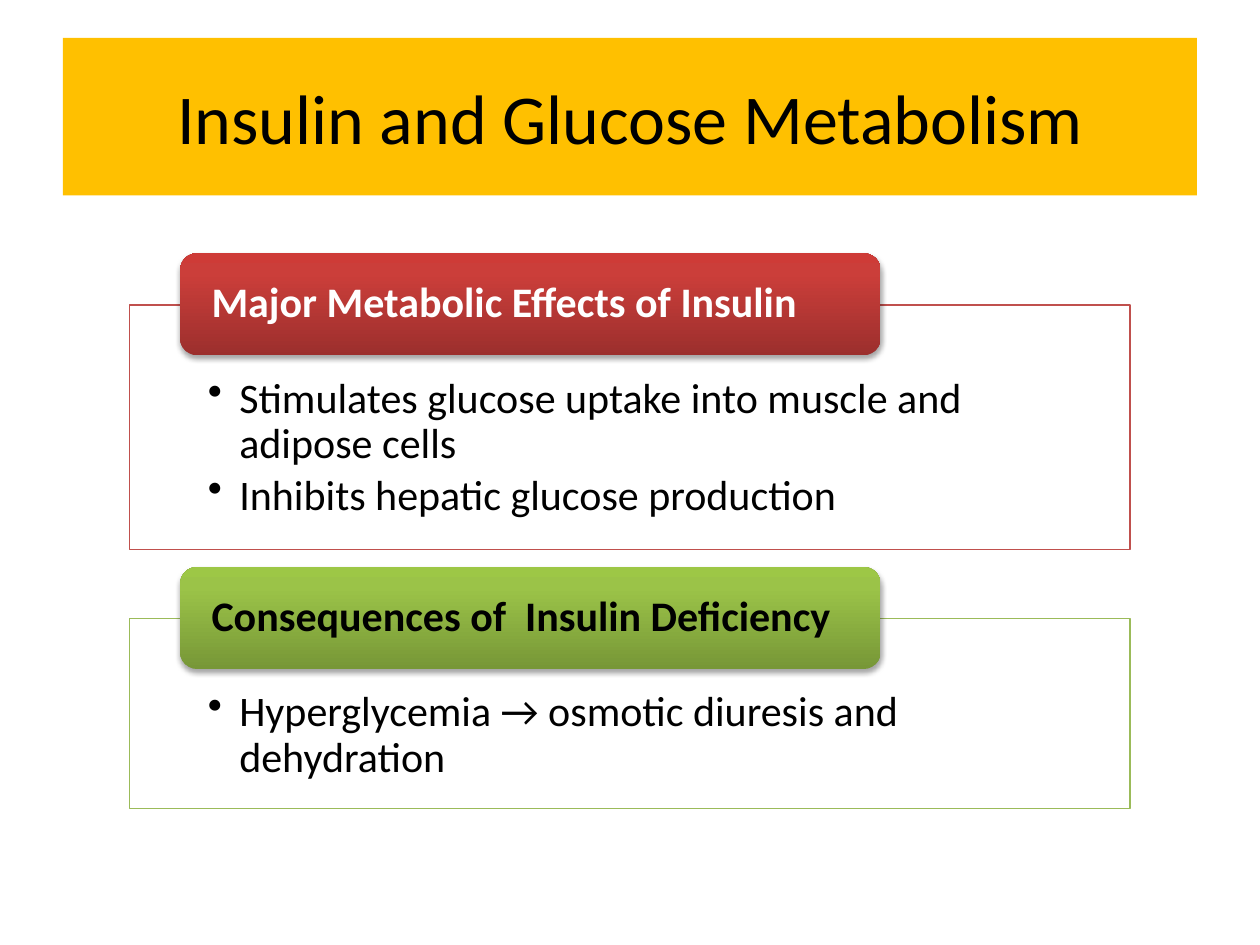
"""Build the slide on insulin and glucose metabolism."""
from lxml.etree import SubElement
from pptx import Presentation
from pptx.dml.color import RGBColor
from pptx.enum.shapes import MSO_SHAPE as Shape
from pptx.enum.text import MSO_ANCHOR as Anchor, PP_ALIGN as Align
from pptx.oxml import parse_xml
from pptx.oxml.ns import nsdecls, qn
from pptx.util import Inches, Pt


def color(value):
    return RGBColor.from_string(value)


class SlideBuilder:
    font_name = "Calibri"
    body_size = 24
    black = "000000"
    white = "FFFFFF"

    def __init__(self, slide):
        self.slide = slide

    def shape(self, kind, left, top, width, height, insets, anchor=Anchor.MIDDLE):
        shape = self.slide.shapes.add_shape(
            kind, Inches(left), Inches(top), Inches(width), Inches(height))
        shape.shadow.inherit = False
        shape.line.fill.background()
        frame = shape.text_frame
        frame.word_wrap = True
        frame.vertical_anchor = anchor
        frame.margin_left, frame.margin_top, frame.margin_right, frame.margin_bottom = map(
            Inches, insets)
        return shape

    def text(self, paragraph, wording, size=body_size, ink=black, bold=False, align=Align.LEFT):
        paragraph.text = wording
        paragraph.alignment = align
        font = paragraph.font
        font.name, font.size, font.bold = self.font_name, Pt(size), bold
        font.color.rgb = color(ink)

    def title(self, wording, fill):
        banner = self.shape(Shape.RECTANGLE, 0.5, 0.3, 9, 1.25, (0.1, 0.05, 0.1, 0.05))
        banner.fill.solid()
        banner.fill.fore_color.rgb = color(fill)
        self.text(banner.text_frame.paragraphs[0], wording, size=40, align=Align.CENTER)

    def body(self, top, height, outline, items):
        box = self.shape(Shape.RECTANGLE, 1.03, top, 7.94, height,
                         (0.62, 0.57, 0.62, 0.19), Anchor.TOP)
        box.fill.solid()
        box.fill.fore_color.rgb = color(self.white)
        fill_color = box._element.spPr.find(qn("a:solidFill"))[0]
        SubElement(fill_color, qn("a:alpha"), val="90000")
        box.line.color.rgb = color(outline)
        box.line.width = Pt(0.75)
        frame = box.text_frame
        for index, item in enumerate(items):
            paragraph = frame.add_paragraph() if index else frame.paragraphs[0]
            paragraph.line_spacing = 0.9
            paragraph.space_after = Pt(3.6)
            properties = paragraph._p.get_or_add_pPr()
            properties.set("marL", str(Inches(0.25)))
            properties.set("indent", str(Inches(-0.25)))
            SubElement(properties, qn("a:buChar"), char="•")
            self.text(paragraph, item)

    def label(self, top, wording, ink, gradient):
        tab = self.shape(Shape.ROUNDED_RECTANGLE, 1.43, top, 5.56, 0.81, (0.21, 0, 0.21, 0))
        stops = "".join(
            f'<a:gs pos="{position * 1000}"><a:srgbClr val="{value}"/></a:gs>'
            for position, value in zip((0, 80, 100), gradient))
        properties = tab._element.spPr
        properties.find(qn("a:prstGeom")).addnext(parse_xml(
            f'<a:gradFill {nsdecls("a")} rotWithShape="1"><a:gsLst>{stops}</a:gsLst>'
            '<a:lin ang="16200000" scaled="0"/></a:gradFill>'))
        properties.find(qn("a:effectLst")).append(parse_xml(
            f'<a:outerShdw {nsdecls("a")} blurRad="{Pt(3.1)}" dist="{Pt(1.8)}" dir="5400000" '
            f'rotWithShape="0"><a:srgbClr val="{self.black}"><a:alpha val="35000"/></a:srgbClr>'
            '</a:outerShdw>'))
        paragraph = tab.text_frame.paragraphs[0]
        paragraph.line_spacing = 0.9
        self.text(paragraph, wording, ink=ink, bold=True)

    def section(self, top, height, outline, heading, ink, gradient, items):
        self.body(top, height, outline, items)
        self.label(top - 0.41, heading, ink, gradient)


def main():
    presentation = Presentation()
    presentation.slide_width, presentation.slide_height = Inches(10), Inches(7.5)
    builder = SlideBuilder(presentation.slides.add_slide(presentation.slide_layouts[6]))
    builder.title("Insulin and Glucose Metabolism", "FFC000")
    builder.section(
        2.42, 1.94, "C0504D", "Major Metabolic Effects of Insulin", builder.white,
        ("9C2F2D", "CB3E3A", "CE3B37"),
        ("Stimulates glucose uptake into muscle and adipose cells",
         "Inhibits hepatic glucose production"))
    builder.section(
        4.91, 1.51, "9BBB59", "Consequences of  Insulin Deficiency", builder.black,
        ("779737", "9BC348", "9DC746"),
        ("Hyperglycemia → osmotic diuresis and dehydration",))
    presentation.save("out.pptx")


if __name__ == "__main__":
    main()
